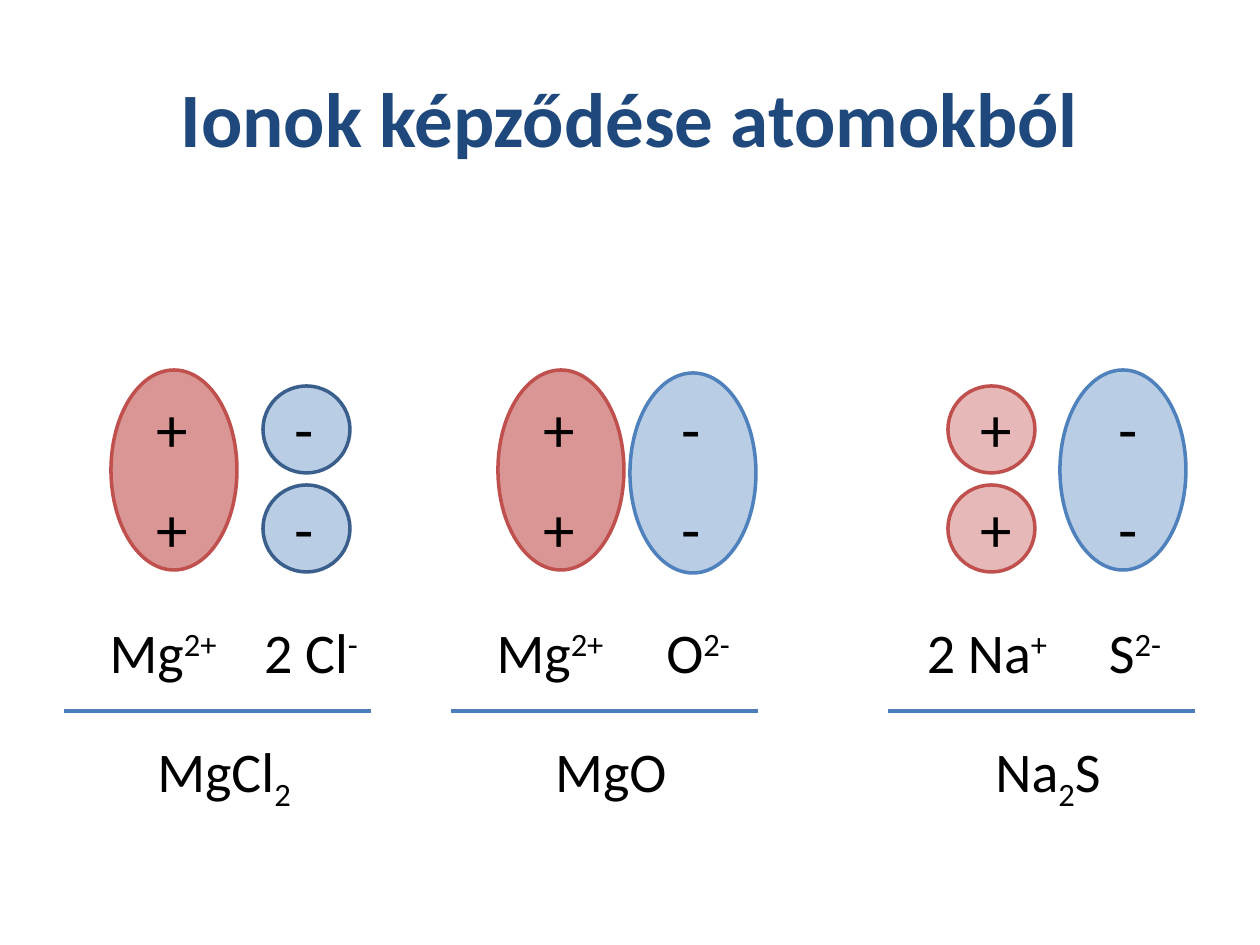
from lxml import etree
from pptx import Presentation
from pptx import util as u
from pptx.dml.color import RGBColor
from pptx.enum import shapes, text
from pptx.oxml.ns import qn

PX = 914400 / 126
FONT = "Calibri"
COLORS = {
    "title": "1F497D", "text": "000000", "rule": "4B7EBC",
    "blue": "B9CDE5", "blue_line": "4F81BD", "navy_line": "3A5F8C",
    "red": "D99694", "pink": "E6B9B8", "red_line": "C0504D",
}
SUP, SUB = 30000, -25000

# Offsets inside a compound, and the rows shared by all compounds
SIGN_ROWS = (383, 483)
CATION_X, ANION_X, FORMULA_X = 99, 247, 160
RULE_WIDTH = 307

# Ions: (left, top, width, height, fill, line); labels: (width, runs)
COMPOUNDS = [
    {"left": 64,
     "ions": [(199, 386, 87, 87, "blue", "navy_line"),
              (199, 485, 87, 87, "blue", "navy_line"),
              (47, 370, 126, 200, "red", "red_line")],
     "cation": (139, [("Mg", 0), ("2+", SUP)]),
     "anion": (122, [("2 Cl", 0), ("-", SUP)]),
     "formula": (163, [("MgCl", 0), ("2", SUB)])},
    {"left": 451,
     "ions": [(179, 373, 126, 200, "blue", "blue_line"),
              (47, 370, 126, 200, "red", "red_line")],
     "cation": (139, [("Mg", 0), ("2+", SUP)]),
     "anion": (93, [("O", 0), ("2-", SUP)]),
     "formula": (139, [("MgO", 0)])},
    {"left": 888,
     "ions": [(60, 386, 87, 87, "pink", "red_line"),
              (60, 485, 87, 87, "pink", "red_line"),
              (172, 370, 126, 200, "blue", "blue_line")],
     "cation": (150, [("2 Na", 0), ("+", SUP)]),
     "anion": (82, [("S", 0), ("2-", SUP)]),
     "formula": (135, [("Na", 0), ("2", SUB), ("S", 0)])},
]


def px(*values):
    return [u.Emu(round(v * PX)) for v in values]


def rgb(name):
    return RGBColor.from_string(COLORS[name])


def add_text(parent, box, runs, size, color="text", bold=False,
             align=text.PP_ALIGN.CENTER, wrap=False):
    tf = parent.add_textbox(*px(*box)).text_frame
    tf.word_wrap = wrap
    tf.auto_size = text.MSO_AUTO_SIZE.NONE if wrap else text.MSO_AUTO_SIZE.SHAPE_TO_FIT_TEXT
    tf.vertical_anchor = text.MSO_ANCHOR.MIDDLE if wrap else text.MSO_ANCHOR.TOP
    p = tf.paragraphs[0]
    p.alignment = align
    for content, baseline in runs:
        r = p.add_run()
        r.text = content
        r.font.name, r.font.size, r.font.bold = FONT, u.Pt(size), bold
        r.font.color.rgb = rgb(color)
        if baseline:
            r._r.get_or_add_rPr().set("baseline", str(baseline))


def add_ion(parent, box, fill, line):
    sp = parent.add_shape(shapes.MSO_SHAPE.OVAL, *px(*box))
    sp.shadow.inherit = False
    sp.fill.solid()
    sp.fill.fore_color.rgb = rgb(fill)
    sp.line.color.rgb = rgb(line)
    sp.line.width = u.Pt(2)


def add_rule(parent, left, y):
    line = parent.add_connector(shapes.MSO_CONNECTOR.STRAIGHT,
                                *px(left, y, left + RULE_WIDTH, y))
    line.line.color.rgb = rgb("rule")
    line.line.width = u.Pt(2.25)
    etree.SubElement(line._element.spPr, qn("a:effectLst"))


def add_label(parent, center, top, label):
    width, runs = label
    add_text(parent, (center - width / 2, top, width, 81), runs, 32)


def add_compound(slide, compound):
    group = slide.shapes.add_group_shape().shapes
    left = compound["left"]

    # Ions and their charges
    for x, y, w, h, fill, line in compound["ions"]:
        add_ion(group, (left + x, y, w, h), fill, line)
    for sign, x, width in (("+", 80, 57), ("-", 218, 45)):
        for y in SIGN_ROWS:
            add_text(group, (left + x, y, width, 89), [(sign, 0)], 36,
                     align=text.PP_ALIGN.LEFT)

    # Ion symbols above the rule, formula below it
    add_label(group, left + CATION_X, 611, compound["cation"])
    add_label(group, left + ANION_X, 611, compound["anion"])
    add_rule(group, left, 711)
    add_label(group, left + FORMULA_X, 730, compound["formula"])


def main():
    prs = Presentation()
    prs.slide_width, prs.slide_height = px(1260, 945)
    slide = prs.slides.add_slide(prs.slide_layouts[6])

    # Title
    add_text(slide.shapes, (63, 38, 1134, 158), [("Ionok képződése atomokból", 0)],
             44, "title", bold=True, wrap=True)

    # Compounds
    for compound in COMPOUNDS:
        add_compound(slide, compound)
    prs.save("out.pptx")


if __name__ == "__main__":
    main()
